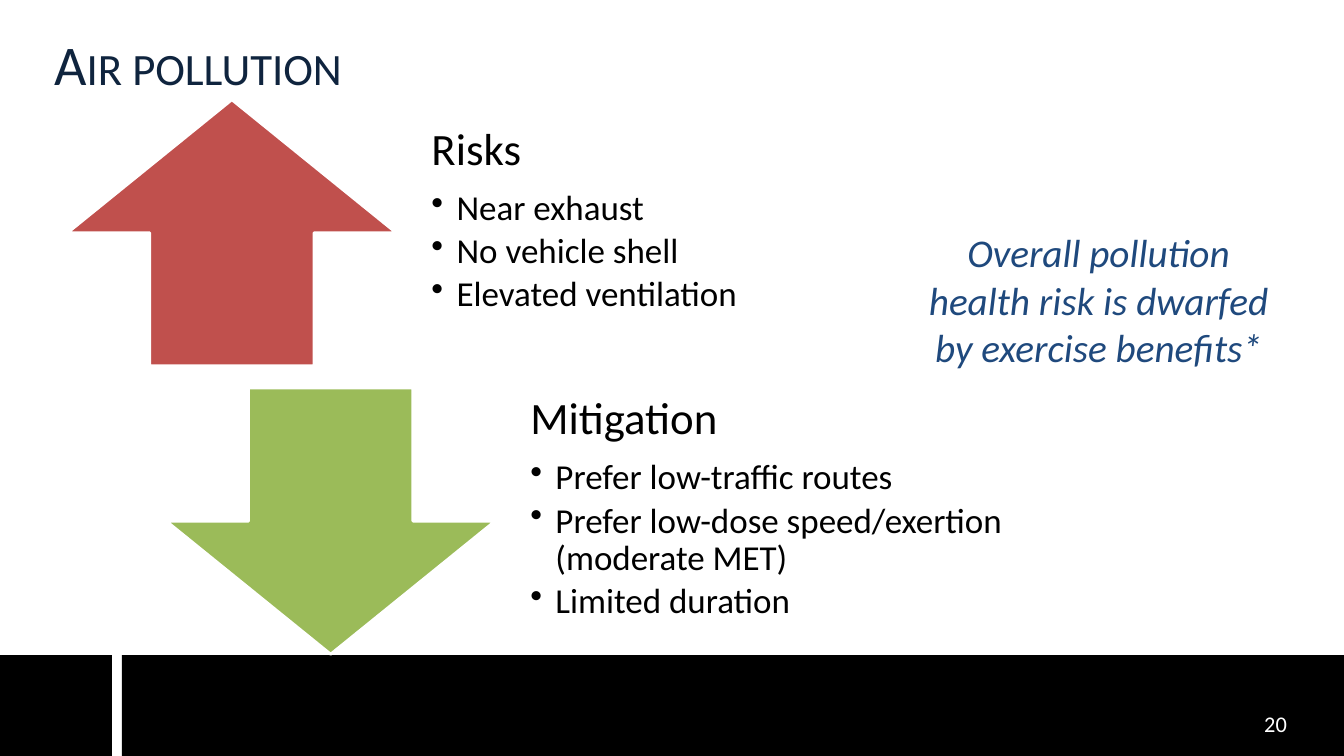
"""Build the air pollution slide: risks, mitigation and the overall message."""
from dataclasses import dataclass

import lxml.etree
import pptx
import pptx.dml.color
import pptx.enum.shapes
import pptx.enum.text
import pptx.oxml.ns
import pptx.slide
import pptx.shapes.autoshape
import pptx.text.text
import pptx.util

Inches = pptx.util.Inches
Pt = pptx.util.Pt
Shapes = pptx.enum.shapes.MSO_SHAPE
Anchor = pptx.enum.text.MSO_ANCHOR

SLIDE_WIDTH, SLIDE_HEIGHT = 13.33, 7.5
FOOTER_TOP = 6.5
ARROW_WIDTH, BLOCK_HEIGHT = 3.26, 2.64
TEXT_OFFSET, TEXT_WIDTH = 3.36, 5.53
BULLET_INDENT = 0.25


@dataclass
class Box:
    left: float
    top: float
    width: float
    height: float


@dataclass
class Topic:
    heading: str
    bullets: list[str]
    arrow: Shapes
    color: str
    left: float
    top: float


TOPICS = [
    Topic("Risks", ["Near exhaust", "No vehicle shell", "Elevated ventilation"],
          Shapes.UP_ARROW, "C0504D", 0.67, 0.99),
    Topic("Mitigation",
          ["Prefer low-traffic routes",
           "Prefer low-dose speed/exertion\n(moderate MET)",
           "Limited duration"],
          Shapes.DOWN_ARROW, "9BBB59", 1.65, 3.85),
]

FOOTER_BARS = [
    Box(0, FOOTER_TOP, 1.11, SLIDE_HEIGHT - FOOTER_TOP),
    Box(1.21, FOOTER_TOP, SLIDE_WIDTH - 1.21, SLIDE_HEIGHT - FOOTER_TOP),
]


def rgb(color: str) -> pptx.dml.color.RGBColor:
    return pptx.dml.color.RGBColor.from_string(color)


def place(box: Box) -> list[pptx.util.Length]:
    return [Inches(value) for value in (box.left, box.top, box.width, box.height)]


def add_filled_shape(slide: pptx.slide.Slide, kind: Shapes, box: Box,
                     color: str) -> pptx.shapes.autoshape.Shape:
    shape = slide.shapes.add_shape(kind, *place(box))
    shape.shadow.inherit = False
    shape.fill.solid()
    shape.fill.fore_color.rgb = rgb(color)
    shape.line.fill.background()
    return shape


def add_text_frame(slide: pptx.slide.Slide, box: Box,
                   anchor: Anchor = Anchor.TOP) -> pptx.text.text.TextFrame:
    frame = slide.shapes.add_textbox(*place(box)).text_frame
    frame.word_wrap = True
    frame.vertical_anchor = anchor
    return frame


def add_run(paragraph: pptx.text.text._Paragraph, text: str, size: float,
            color: str) -> pptx.text.text._Run:
    run = paragraph.add_run()
    run.text = text
    run.font.name = "Calibri"
    run.font.size = Pt(size)
    run.font.color.rgb = rgb(color)
    return run


def set_bullet(paragraph: pptx.text.text._Paragraph) -> None:
    properties = paragraph._p.get_or_add_pPr()
    properties.set("marL", str(Inches(BULLET_INDENT)))
    properties.set("indent", str(-Inches(BULLET_INDENT)))
    bullet = lxml.etree.SubElement(properties, pptx.oxml.ns.qn("a:buChar"))
    bullet.set("char", "•")


def add_topic(slide: pptx.slide.Slide, topic: Topic) -> None:
    arrow_box = Box(topic.left, topic.top, ARROW_WIDTH, BLOCK_HEIGHT)
    arrow = add_filled_shape(slide, topic.arrow, arrow_box, topic.color)
    arrow.line.color.rgb = rgb("FFFFFF")
    arrow.line.width = Pt(2)

    text_box = Box(topic.left + TEXT_OFFSET, topic.top, TEXT_WIDTH, BLOCK_HEIGHT)
    frame = add_text_frame(slide, text_box, Anchor.MIDDLE)
    frame.margin_left = frame.margin_right = frame.margin_bottom = Inches(0.25)
    frame.margin_top = 0
    heading = frame.paragraphs[0]
    heading.line_spacing = 0.9
    heading.space_after = Pt(11.2)
    add_run(heading, topic.heading, 32, "000000")
    for bullet in topic.bullets:
        paragraph = frame.add_paragraph()
        paragraph.level = 1
        paragraph.line_spacing = 0.9
        paragraph.space_after = Pt(3.75)
        set_bullet(paragraph)
        for index, line in enumerate(bullet.split("\n")):
            if index:
                paragraph.add_line_break()
            add_run(paragraph, line, 25, "000000")


def main() -> None:
    presentation = pptx.Presentation()
    presentation.slide_width = Inches(SLIDE_WIDTH)
    presentation.slide_height = Inches(SLIDE_HEIGHT)
    slide = presentation.slides.add_slide(presentation.slide_layouts[6])

    for bar in FOOTER_BARS:
        add_filled_shape(slide, Shapes.RECTANGLE, bar, "000000")

    title = add_text_frame(slide, Box(0.44, 0.17, 12.44, 0.92), Anchor.MIDDLE)
    title_run = add_run(title.paragraphs[0], "Air pollution", 40, "0F243E")
    title_run._r.get_or_add_rPr().set("cap", "small")

    for topic in TOPICS:
        add_topic(slide, topic)

    page_number = add_text_frame(slide, Box(12.44, 7, 0.89, 0.5))
    add_run(page_number.paragraphs[0], "20", 16, "FFFFFF")

    message = add_text_frame(slide, Box(9.07, 2.22, 3.65, 1.51)).paragraphs[0]
    message.alignment = pptx.enum.text.PP_ALIGN.CENTER
    message_run = add_run(
        message, "Overall pollution health risk is dwarfed by exercise benefits*",
        28, "1F497D")
    message_run.font.italic = True

    presentation.save("out.pptx")


if __name__ == "__main__":
    main()
